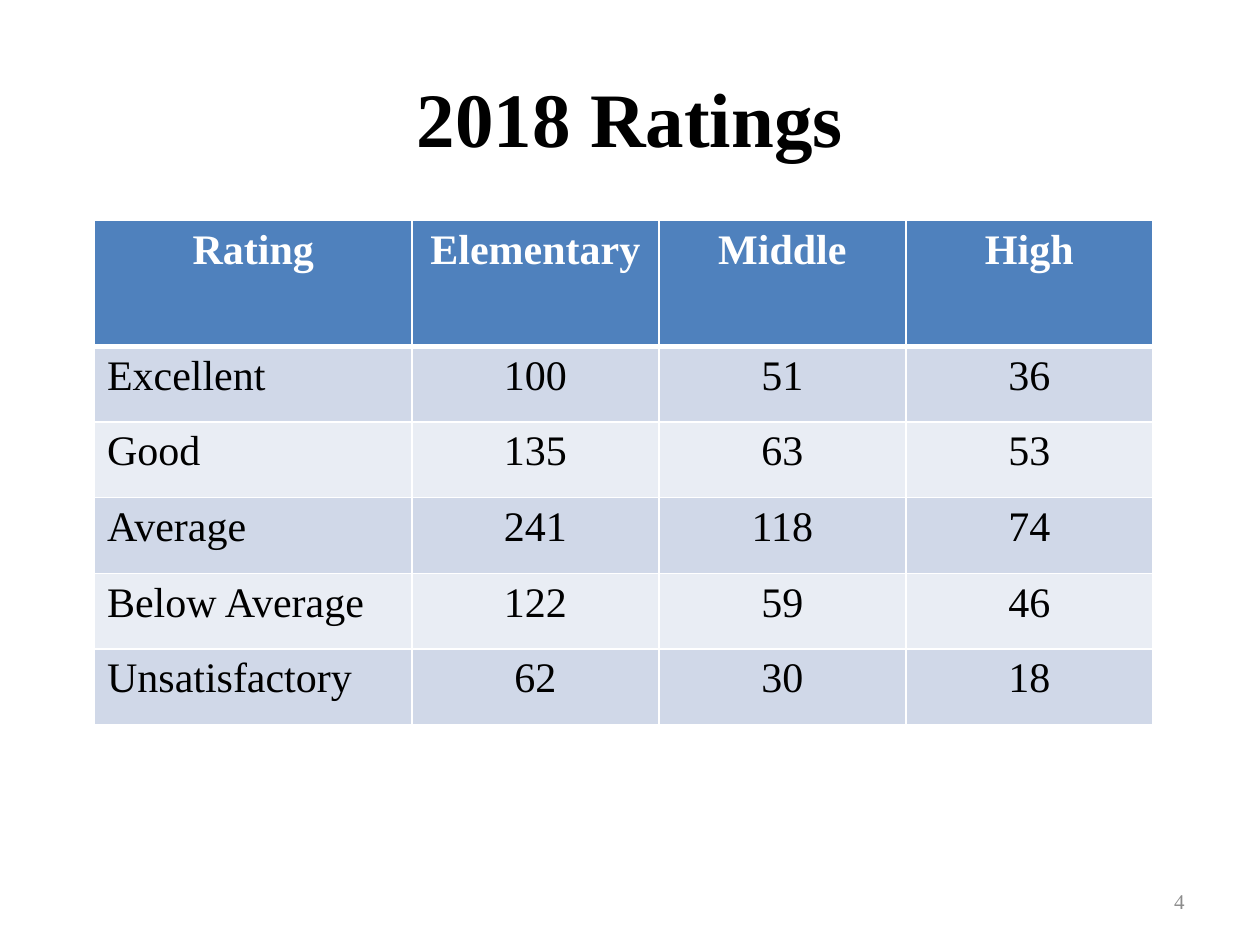
from dataclasses import dataclass
from typing import Any

from lxml import etree
from pptx import Presentation
from pptx import util as u
from pptx.dml.color import RGBColor
from pptx.enum import text
from pptx.oxml import ns

WHITE = RGBColor(0xFF, 0xFF, 0xFF)
BLACK = RGBColor(0, 0, 0)
GRAY = RGBColor(0x8C, 0x8C, 0x8C)
BLUE = RGBColor(0x4F, 0x81, 0xBD)
BANDS = (RGBColor(0xD0, 0xD8, 0xE8), RGBColor(0xE9, 0xED, 0xF4))

RATINGS = [
    ("Rating", "Elementary", "Middle", "High"),
    ("Excellent", "100", "51", "36"),
    ("Good", "135", "63", "53"),
    ("Average", "241", "118", "74"),
    ("Below Average", "122", "59", "46"),
    ("Unsatisfactory", "62", "30", "18"),
]


@dataclass
class SlideBuilder:
    slide: Any
    font_name: str = "Times New Roman"

    def add_words(self, frame, words, size, color, alignment, bold=False):
        paragraph = frame.paragraphs[0]
        paragraph.alignment = alignment
        run = paragraph.add_run()
        run.text = words
        formats = {"name": self.font_name, "size": u.Pt(size), "bold": bold}
        for attribute, value in formats.items():
            setattr(run.font, attribute, value)
        run.font.color.rgb = color

    def place(self, shape, left, top, width, height):
        bounds = {"left": left, "top": top, "width": width, "height": height}
        for attribute, value in bounds.items():
            setattr(shape, attribute, u.Inches(value))
        shape.text_frame.vertical_anchor = text.MSO_ANCHOR.MIDDLE
        shape.text_frame.word_wrap = True

    def title(self, words, *bounds):
        shape = self.slide.shapes.title
        self.place(shape, *bounds)
        self.add_words(shape.text_frame, words, 44, BLACK, text.PP_ALIGN.CENTER, True)

    def page_number(self, words, *bounds):
        shape = self.slide.shapes.add_textbox(0, 0, 0, 0)
        self.place(shape, *bounds)
        self.add_words(shape.text_frame, words, 12, GRAY, text.PP_ALIGN.RIGHT)

    def borders(self, cell, **widths):
        properties = cell._tc.get_or_add_tcPr()
        for side, width in widths.items():
            line = etree.SubElement(properties, ns.qn(f"a:ln{side}"), w=str(u.Pt(width)))
            fill = etree.SubElement(line, ns.qn("a:solidFill"))
            etree.SubElement(fill, ns.qn("a:srgbClr"), val=str(WHITE))

    def table(self, rows, left, top, column_widths, row_heights):
        lengths = (left, top, sum(column_widths), sum(row_heights))
        frame = self.slide.shapes.add_table(
            len(rows), len(column_widths), *map(u.Inches, lengths))
        table = frame.table
        for column, width in zip(table.columns, column_widths):
            column.width = u.Inches(width)
        for row, height in zip(table.rows, row_heights):
            row.height = u.Inches(height)
        for row_index, row in enumerate(rows):
            header = row_index == 0
            for column_index, words in enumerate(row):
                cell = table.cell(row_index, column_index)
                self.borders(cell, L=1, R=1, T=3 if row_index == 1 else 1,
                             B=3 if header else 1)
                cell.fill.solid()
                cell.fill.fore_color.rgb = BLUE if header else BANDS[(row_index - 1) % 2]
                centered = header or column_index > 0
                alignment = text.PP_ALIGN.CENTER if centered else text.PP_ALIGN.LEFT
                self.add_words(cell.text_frame, words, 24, WHITE if header else BLACK,
                               alignment, header)


def main():
    presentation = Presentation()
    presentation.slide_width = u.Inches(10)
    presentation.slide_height = u.Inches(7.5)
    builder = SlideBuilder(presentation.slides.add_slide(presentation.slide_layouts[5]))
    builder.title("2018 Ratings", 0.5, 0.3, 9, 1.25)
    builder.page_number("4", 7.17, 6.95, 2.33, 0.4)
    builder.table(RATINGS, 0.75, 1.75, [2.52] + [1.96] * 3, [1] + [0.6] * 5)
    presentation.save("out.pptx")


if __name__ == "__main__":
    main()
